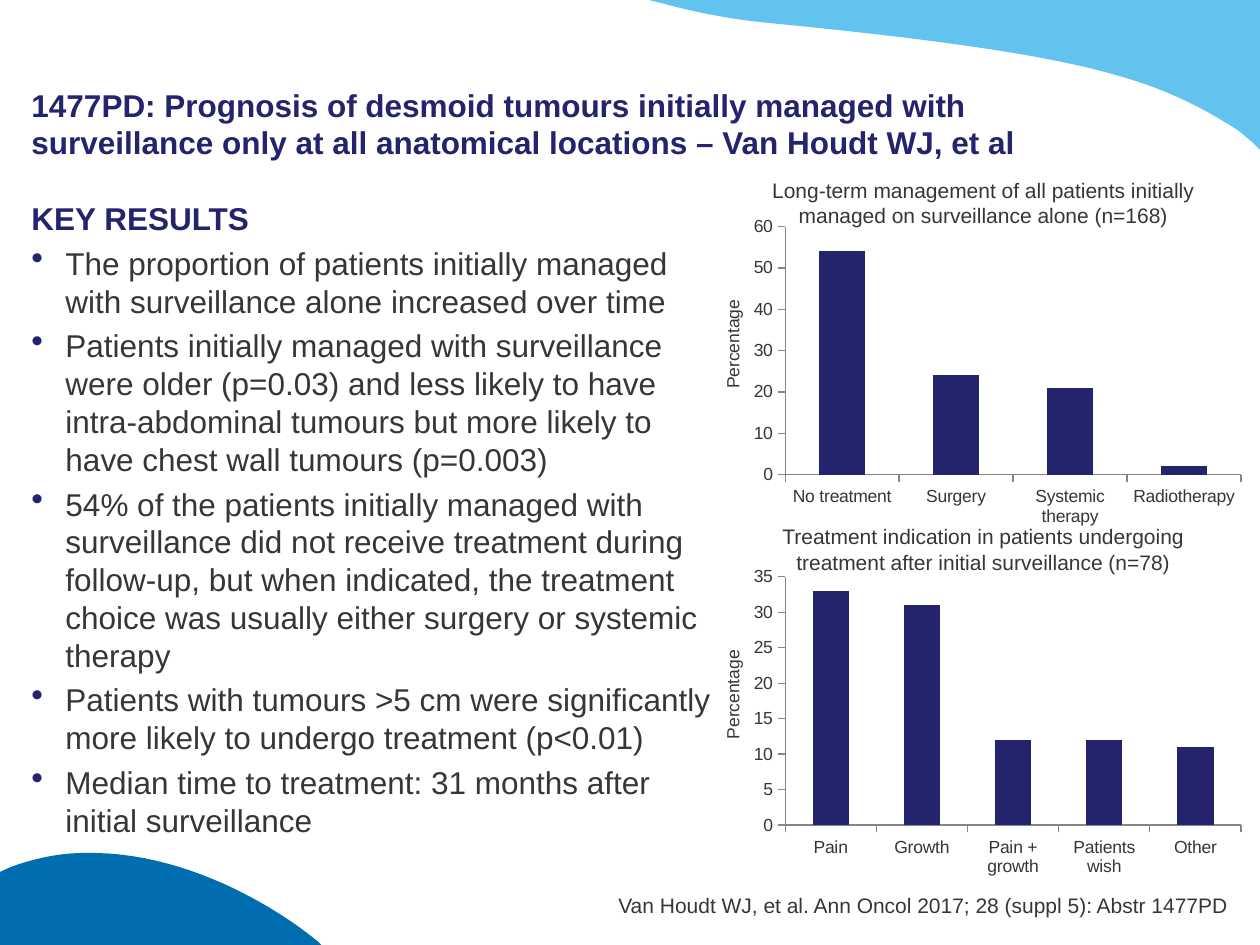
from dataclasses import dataclass

from lxml.etree import SubElement
from pptx import Presentation
from pptx.chart.data import CategoryChartData
from pptx.dml.color import RGBColor
from pptx.enum.chart import XL_CHART_TYPE, XL_TICK_MARK
from pptx.enum.text import MSO_ANCHOR, PP_ALIGN
from pptx.oxml import parse_xml
from pptx.oxml.ns import nsdecls, qn
from pptx.slide import Slide
from pptx.util import Inches, Pt

NAVY = RGBColor(0x23, 0x24, 0x6D)
SKY = RGBColor(0x62, 0xC4, 0xEE)
BLUE = RGBColor(0x00, 0x6D, 0xB0)
TEXT = RGBColor(0x36, 0x36, 0x36)
AXIS = RGBColor(0x86, 0x86, 0x86)

COLUMNS, ROWS = 100, 75
CURVE_STEPS = 24

TITLE = ("1477PD: Prognosis of desmoid tumours initially managed with "
         "surveillance only at all anatomical locations – Van Houdt WJ, et al")
RESULTS = [
    "The proportion of patients initially managed with surveillance alone increased over time",
    "Patients initially managed with surveillance were older (p=0.03) and less likely to have "
    "intra-abdominal tumours but more likely to have chest wall tumours (p=0.003)",
    "54% of the patients initially managed with surveillance did not receive treatment during "
    "follow-up, but when indicated, the treatment choice was usually either surgery or systemic therapy",
    "Patients with tumours >5 cm were significantly more likely to undergo treatment (p<0.01)",
    "Median time to treatment: 31 months after initial surveillance",
]
CITATION = "Van Houdt WJ, et al. Ann Oncol 2017; 28 (suppl 5): Abstr 1477PD"
CHARTS = [
    (13.6, 16.7, "Long-term management of all patients initially managed on surveillance alone (n=168)",
     {"No treatment": 54, "Surgery": 24, "Systemic therapy": 21, "Radiotherapy": 2}, 60, 10),
    (41.1, 44.5, "Treatment indication in patients undergoing treatment after initial surveillance (n=78)",
     {"Pain": 33, "Growth": 31, "Pain + growth": 12, "Patients wish": 12, "Other": 11}, 35, 5),
]
TOP_WAVE = [
    [(51.5, 0)], [(100, 0)], [(100, 11.9)], [(99.3, 11.2)],
    [(98.9, 10.9), (98.6, 10.6), (98.2, 10.3)],
    [(91.7, 6.2), (86.4, 4.3), (60.8, 1.8)],
    [(57.7, 1.5), (54.9, 0.9), (52.3, 0.2)],
]
BOTTOM_WAVE = [
    [(6.7, 67.7)], [(14.5, 67.5), (21.8, 71.9), (25.2, 74.7)],
    [(25.5, 75)], [(0, 75)], [(0, 69.2)], [(0.9, 68.8)],
    [(2.8, 68.1), (4.8, 67.7), (6.7, 67.7)],
]


def bezier(points, t):
    while len(points) > 1:
        points = [tuple(a + (b - a) * t for a, b in zip(p, q)) for p, q in zip(points, points[1:])]
    return points[0]


@dataclass
class Painter:
    page: Slide
    cell_width: float
    cell_height: float
    font: str = "Arial"

    def place(self, left, top, width, height):
        return (round(left * self.cell_width), round(top * self.cell_height),
                round(width * self.cell_width), round(height * self.cell_height))

    def style(self, font, size, color=TEXT, bold=False):
        font.name, font.size, font.bold = self.font, Pt(size), bold
        font.color.rgb = color

    def wave(self, segments, color):
        outline = list(segments[0])
        for segment in segments[1:]:
            steps = CURVE_STEPS if len(segment) == 3 else 1
            points = [outline[-1], *segment]
            outline += [bezier(points, step / steps) for step in range(1, steps + 1)]
        corners = [self.place(x, y, 0, 0)[:2] for x, y in outline]
        builder = self.page.shapes.build_freeform(*corners[0])
        builder.add_line_segments(corners[1:], close=True)
        shape = builder.convert_to_shape()
        shape.shadow.inherit = False
        shape.fill.solid()
        shape.fill.fore_color.rgb = color
        shape.line.fill.background()

    def text(self, area, lines, size, color=TEXT, bold=False, align=PP_ALIGN.LEFT,
             anchor=MSO_ANCHOR.TOP, margins=(0.1, 0.05, 0.1, 0.05), wrap=True, rotation=0):
        box = self.page.shapes.add_textbox(*self.place(*area))
        box.rotation = rotation
        frame = box.text_frame
        frame.word_wrap, frame.vertical_anchor = wrap, anchor
        (frame.margin_left, frame.margin_top,
         frame.margin_right, frame.margin_bottom) = map(Inches, margins)
        frame.text = "\n".join(lines)
        for para in frame.paragraphs:
            para.alignment = align
            self.style(para.font, size, color, bold)
        return frame.paragraphs

    def bullet(self, para):
        properties = para._p.get_or_add_pPr()
        properties.set("marL", str(Inches(0.27)))
        properties.set("indent", str(-Inches(0.27)))
        marks = [
            parse_xml(f'<a:buClr {nsdecls("a")}><a:srgbClr val="{NAVY}"/></a:buClr>'),
            parse_xml(f'<a:buSzPct {nsdecls("a")} val="110000"/>'),
            parse_xml(f'<a:buChar {nsdecls("a")} char="•"/>'),
        ]
        defaults = properties.find(qn("a:defRPr"))
        for mark in marks:
            defaults.addprevious(mark)

    def columns(self, area, values, maximum, step):
        data = CategoryChartData()
        data.categories = list(values)
        data.add_series("Series 1", list(values.values()))
        chart = self.page.shapes.add_chart(
            XL_CHART_TYPE.COLUMN_CLUSTERED, *self.place(*area), data).chart
        chart.has_legend = chart.has_title = False
        self.style(chart.font, 10)
        for axis in (chart.category_axis, chart.value_axis):
            axis.has_major_gridlines = False
            axis.major_tick_mark = XL_TICK_MARK.OUTSIDE
            axis.format.line.color.rgb = AXIS
            self.style(axis.tick_labels.font, 10)
        chart.value_axis.minimum_scale = 0
        chart.value_axis.maximum_scale = maximum
        chart.value_axis.major_unit = step
        plot = chart.plots[0]
        plot.gap_width, plot.vary_by_categories = 150, False
        fill = plot.series[0].format.fill
        fill.solid()
        fill.fore_color.rgb = NAVY
        self.lay_out(chart)

    def lay_out(self, chart):
        area = chart._chartSpace.chart.plotArea
        for old in area.findall(qn("c:layout")):
            area.remove(old)
        layout = parse_xml(f'<c:layout {nsdecls("c")}/>')
        area.insert(0, layout)
        manual = SubElement(layout, qn("c:manualLayout"))
        for tag, value in (("layoutTarget", "inner"), ("xMode", "edge"), ("yMode", "edge"),
                           ("x", "0.08"), ("y", "0.05"), ("w", "0.9"), ("h", "0.77")):
            SubElement(manual, qn(f"c:{tag}")).set("val", value)


def main():
    deck = Presentation()
    deck.slide_width, deck.slide_height = Inches(10), Inches(7.5)
    page = deck.slides.add_slide(deck.slide_layouts[6])
    painter = Painter(page, deck.slide_width / COLUMNS, deck.slide_height / ROWS)

    painter.wave(TOP_WAVE, SKY)
    painter.wave(BOTTOM_WAVE, BLUE)
    painter.text((2.5, 2.5, 79, 10.3), [TITLE], 18, NAVY, True,
                 anchor=MSO_ANCHOR.BOTTOM, margins=(0, 0.05, 0, 0))
    heading, *bullets = painter.text((2.5, 15.3, 54.4, 56.7), ["KEY RESULTS", *RESULTS], 18,
                                     margins=(0, 0.05, 0, 0.05))
    painter.style(heading.font, 18, NAVY, True)
    for para in (heading, *bullets):
        para.space_after = Pt(4)
    for para in bullets:
        painter.bullet(para)
    painter.text((47.8, 70.8, 49.7, 2), [CITATION], 12, align=PP_ALIGN.RIGHT,
                 anchor=MSO_ANCHOR.BOTTOM, margins=(0, 0, 0, 0), wrap=False)

    for caption_top, chart_top, caption, values, maximum, step in CHARTS:
        painter.text((58.8, caption_top, 38.5, 5), [caption], 12, align=PP_ALIGN.CENTER)
        painter.columns((59.1, chart_top, 40.2, 25.6), values, maximum, step)
        painter.text((53.6, chart_top + 9.25, 9.1, 2.7), ["Percentage"], 10,
                     wrap=False, rotation=270)

    deck.save("out.pptx")


if __name__ == "__main__":
    main()
